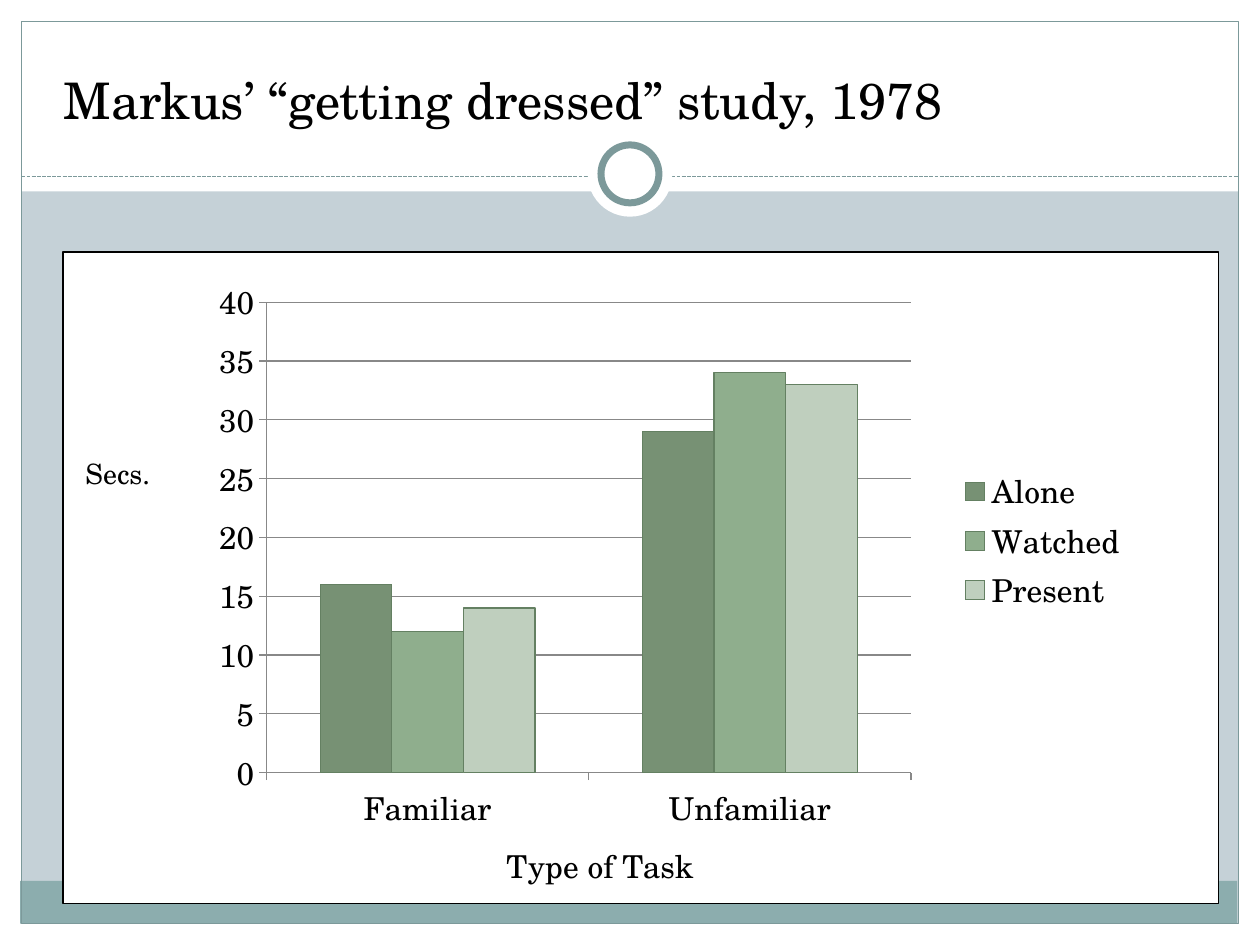
import pptx
import pptx.chart.data
import pptx.dml.color
import pptx.enum.chart
import pptx.enum.dml
import pptx.enum.shapes
import pptx.enum.text
import pptx.oxml
import pptx.oxml.ns
import pptx.util

RGB = pptx.dml.color.RGBColor
WHITE = RGB(0xFF, 0xFF, 0xFF)
BLACK = RGB(0, 0, 0)
MIST = RGB(0xC5, 0xD1, 0xD7)
TEAL = RGB(0x8C, 0xAD, 0xAE)
SLATE = RGB(0x7C, 0x99, 0x9A)
GRAY = RGB(0x88, 0x88, 0x88)
EDGE = RGB(0x64, 0x80, 0x62)
GREENS = (RGB(0x77, 0x91, 0x74), RGB(0x8F, 0xAE, 0x8D), RGB(0xBF, 0xCF, 0xBE))
FACE = "TeX Gyre Schola"
KIND = pptx.enum.shapes.MSO_SHAPE
ALIGN = pptx.enum.text.PP_ALIGN
ANCHOR = pptx.enum.text.MSO_ANCHOR


def part(box, x, y, wide, high):
    """Return the box at the given percentages of another box."""
    left, top, width, height = box
    return (round(left + width * x / 100), round(top + height * y / 100),
            round(width * wide / 100), round(height * high / 100))


def shape(slide, box, kind=KIND.RECTANGLE, fill=None, line=None, size=0.75):
    """Draw a plain shape with an optional fill and outline."""
    item = slide.shapes.add_shape(kind, *box)
    item.shadow.inherit = False
    if fill is None:
        item.fill.background()
    else:
        item.fill.solid()
        item.fill.fore_color.rgb = fill
    if line is None:
        item.line.fill.background()
    else:
        item.line.color.rgb = line
        item.line.width = pptx.util.Pt(size)


def style(font, size):
    """Set the face, size and colour of a font."""
    font.name = FACE
    font.size = pptx.util.Pt(size)
    font.color.rgb = BLACK


def label(slide, box, text, size, align=ALIGN.LEFT, anchor=ANCHOR.TOP):
    """Place one line of text in a wrapping box."""
    frame = slide.shapes.add_textbox(*box).text_frame
    frame.word_wrap = True
    frame.vertical_anchor = anchor
    line = frame.paragraphs[0]
    line.text = text
    line.alignment = align
    style(line.font, size)


def border(slide, box):
    """Draw the white margins, the foot band and the thin frame."""
    for spot in ((0, 97.73, 100, 2.27), (0, 0, 100, 20.27),
                 (0, 0, 1.7, 100), (98.3, 0, 1.7, 100)):
        shape(slide, part(box, *spot), fill=WHITE)
    shape(slide, part(box, 1.6, 93.2, 96.6, 4.53), fill=TEAL)
    shape(slide, part(box, 1.7, 2.27, 96.6, 95.46), line=SLATE)


def header(slide, box):
    """Draw the dashed rule, the ring and the title."""
    left, top, width, _ = part(box, 1.7, 92.11, 96.6, 0)
    rule = slide.shapes.add_connector(
        pptx.enum.shapes.MSO_CONNECTOR.STRAIGHT, left, top, left + width, top)
    rule.line.color.rgb = SLATE
    rule.line.width = pptx.util.Pt(0.75)
    rule.line.dash_style = pptx.enum.dml.MSO_LINE.SQUARE_DOT
    props = rule._element.spPr
    props.append(pptx.oxml.parse_xml(
        "<a:effectLst %s/>" % pptx.oxml.ns.nsdecls("a")))
    shape(slide, part(box, 46.65, 69.08, 6.7, 44.08), KIND.OVAL, WHITE)
    shape(slide, part(box, 47.7, 75.66, 4.6, 30.26), KIND.OVAL, WHITE, SLATE, 4)
    label(slide, part(box, 3.3, 16.45, 73.3, 54.61),
          "Markus’ “getting dressed” study, 1978", 28.8,
          ALIGN.CENTER, ANCHOR.BOTTOM)


def layout(x, y, wide, high, inner=False):
    """Build a manual chart layout from shares of the chart."""
    target = '<c:layoutTarget val="inner"/>' if inner else ""
    modes = '<c:xMode val="edge"/><c:yMode val="edge"/>'
    sizes = "".join('<c:%s val="%s"/>' % pair
                    for pair in zip("xywh", (x, y, wide, high)))
    return pptx.oxml.parse_xml(
        "<c:layout %s><c:manualLayout>%s</c:manualLayout></c:layout>"
        % (pptx.oxml.ns.nsdecls("c"), target + modes + sizes))


def graph(slide, box):
    """Draw the panel with the column chart and its axis names."""
    shape(slide, box, fill=WHITE, line=BLACK)
    data = pptx.chart.data.CategoryChartData()
    data.categories = ("Familiar", "Unfamiliar")
    for name, vals in (("Alone", (16, 29)), ("Watched", (12, 34)),
                       ("Present", (14, 33))):
        data.add_series(name, vals)
    chart = slide.shapes.add_chart(
        pptx.enum.chart.XL_CHART_TYPE.COLUMN_CLUSTERED,
        *part(box, 9.16, 0, 84.51, 96.32), data).chart
    chart.has_title = False
    style(chart.font, 18)
    plot = chart.plots[0]
    plot.vary_by_categories = False
    plot.gap_width = 150
    plot.overlap = 0
    for series, hue in zip(plot.series, GREENS):
        series.format.fill.solid()
        series.format.fill.fore_color.rgb = hue
        series.format.line.color.rgb = EDGE
        series.format.line.width = pptx.util.Pt(0.75)
    for axis in (chart.category_axis, chart.value_axis):
        axis.major_tick_mark = pptx.enum.chart.XL_TICK_MARK.OUTSIDE
        axis.format.line.color.rgb = GRAY
        axis.format.line.width = pptx.util.Pt(0.75)
    scale = chart.value_axis
    scale.minimum_scale, scale.maximum_scale, scale.major_unit = 0, 40, 5
    scale.has_major_gridlines = True
    grid = scale.major_gridlines.format.line
    grid.color.rgb = GRAY
    grid.width = pptx.util.Pt(0.75)
    chart.has_legend = True
    key = chart.legend
    key.position = pptx.enum.chart.XL_LEGEND_POSITION.RIGHT
    key.include_in_layout = False
    style(key.font, 18)
    area = chart._chartSpace.chart.plotArea
    for old in area.findall(pptx.oxml.ns.qn("c:layout")):
        area.remove(old)
    area.insert(0, layout(0.1, 0.08, 0.66, 0.75, True))
    node = key._element
    for old in node.findall(pptx.oxml.ns.qn("c:layout")):
        node.remove(old)
    node.find(pptx.oxml.ns.qn("c:legendPos")).addnext(
        layout(0.8, 0.34, 0.19, 0.24))
    label(slide, part(box, 0.87, 30.37, 8.83, 30.37), "Secs.", 16)
    label(slide, part(box, 37.3, 90.33, 25.08, 7.74), "Type of Task", 18)


def main():
    """Build and save the slide."""
    deck = pptx.Presentation()
    deck.slide_width = pptx.util.Inches(10)
    deck.slide_height = pptx.util.Inches(7.5)
    slide = deck.slides.add_slide(deck.slide_layouts[6])
    slide.background.fill.solid()
    slide.background.fill.fore_color.rgb = MIST
    page = (0, 0, deck.slide_width, deck.slide_height)
    border(slide, page)
    header(slide, part(page, 0, 0, 100, 20.27))
    graph(slide, part(page, 5, 26.67, 91.7, 68.93))
    deck.save("out.pptx")


if __name__ == "__main__":
    main()
